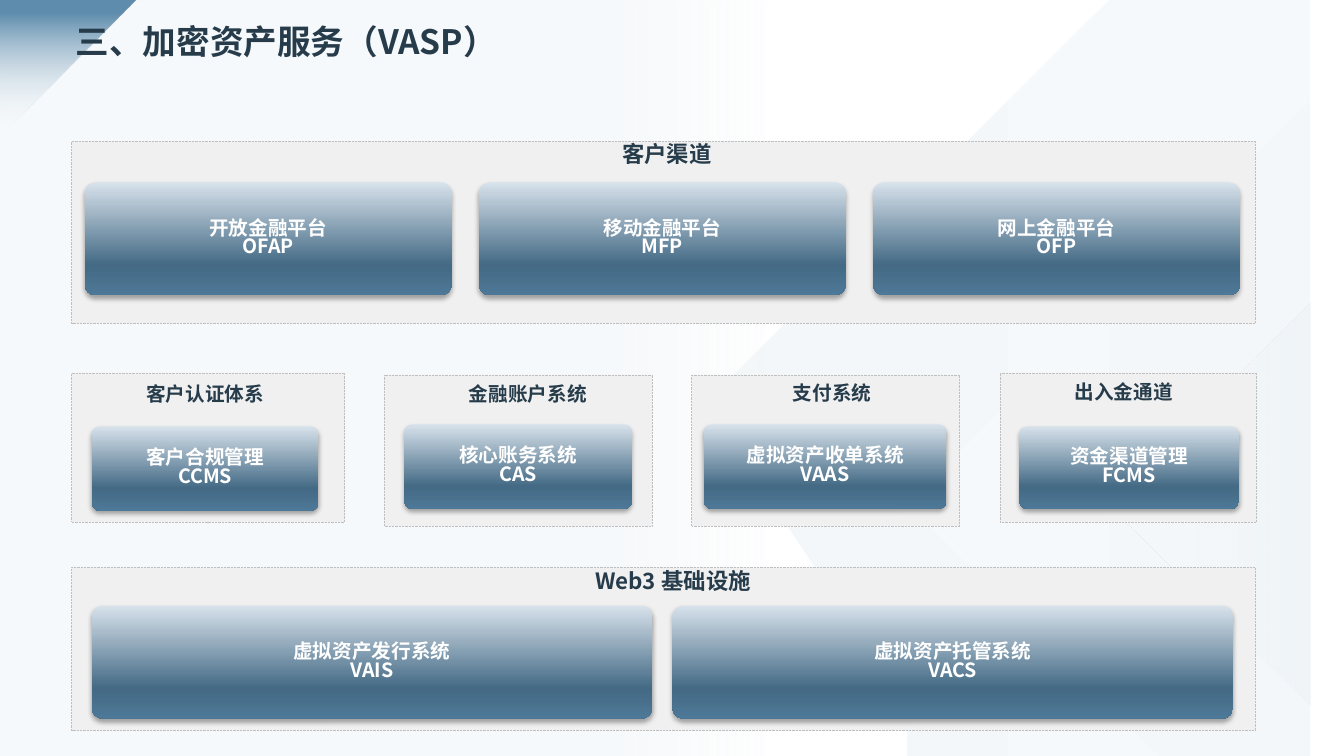
"""Build the slide on crypto asset services."""
import dataclasses

import pptx
import pptx.dml.color
import pptx.enum.dml
import pptx.enum.shapes
import pptx.enum.text
import pptx.oxml
import pptx.oxml.ns
import pptx.util

SIZE = 13.33, 7.5
TITLE = "三、加密资产服务（VASP）"
EDGE = 0.71, 11.74

PANELS = [
    dict(head="客户渠道", area=(EDGE[0], 1.4, EDGE[1], 1.81), label=(5.3, 1.36, 2.63, 0.29),
         first=(0.84, 1.81, 3.64, 1.12), gap=0.27, big=True,
         items=["开放金融平台\nOFAP", "移动金融平台\nMFP", "网上金融平台\nOFP"]),
    dict(head="客户认证体系", area=(EDGE[0], 3.7, 2.71, 1.48), label=(0.91, 3.85, 2.25, 0.28),
         first=(0.91, 4.23, 2.25, 0.84), items=["客户合规管理\nCCMS"]),
    dict(head="金融账户系统", area=(3.81, 3.72, 2.66, 1.5), label=(4.36, 3.85, 1.75, 0.32),
         first=(4.01, 4.21, 2.26, 0.84), items=["核心账务系统\nCAS"]),
    dict(head="支付系统", area=(6.86, 3.72, 2.66, 1.5), label=(7.05, 3.84, 2.41, 0.32),
         first=(6.98, 4.21, 2.41, 0.84), items=["虚拟资产收单系统\nVAAS"]),
    dict(head="出入金通道", area=(9.92, 3.7, 2.54, 1.48), label=(10.37, 3.83, 1.55, 0.28),
         first=(10.11, 4.23, 2.18, 0.82), items=["资金渠道管理\nFCMS"]),
    dict(head="Web3 基础设施", area=(EDGE[0], 5.63, EDGE[1], 1.62), label=(4.75, 5.6, 3.85, 0.29),
         first=(0.91, 6.01, 5.56, 1.12), gap=0.2, big=True,
         items=["虚拟资产发行系统\nVAIS", "虚拟资产托管系统\nVACS"]),
]


@dataclasses.dataclass
class Theme:
    font: str = "Noto Sans CJK SC"
    ink: str = "273C4B"
    white: str = "FFFFFF"
    panel: str = "F0F0F0"
    rim: str = "BFBFBF"
    title: int = 24
    head: int = 16
    body: int = 14
    box: tuple = ((0, "D7E2EB"), (73, "446A85"), (100, "4D7897"))
    facet: tuple = ((0, "F6F9FB"), (100, "F3F7F9"))
    fade: tuple = ((0, "F6F9FB"), (57, "F3F7F9"), (100, "EFF4F8", 70))
    veil: tuple = ((45, "F6F9FB"), (58, "F6F9FB", 0))
    corner: tuple = ((10, "5F8DAD"), (95, "F6F9FB", 0))


LOOK = Theme()
KIND = pptx.enum.shapes.MSO_SHAPE
ALIGN = pptx.enum.text.PP_ALIGN
ANCHOR = pptx.enum.text.MSO_ANCHOR
NS = pptx.oxml.ns.nsdecls("a")

FACETS = [
    ([(11.05, 0), (13.33, 0), (13.33, 7.5), (8.74, 7.5), (9.48, 6.76), (6.89, 4.16)],
     LOOK.facet, 180),
    ([(12.77, 1.26), (13.33, 1.26), (13.33, 7.5), (12.33, 7.5), (9.43, 4.6)], LOOK.facet, 0),
    ([(13.33, 3.21), (13.33, 7.11), (11.38, 5.16)], LOOK.fade, 0),
]


def tint(code):
    return pptx.dml.color.RGBColor.from_string(code)


def blend(shape, stops, angle):
    shape.shadow.inherit = False
    shape.line.fill.background()
    shape.fill.solid()
    marks = "".join(
        f'<a:gs pos="{pos * 1000}"><a:srgbClr val="{code}">'
        f'<a:alpha val="{(alpha or [100])[0] * 1000}"/></a:srgbClr></a:gs>'
        for pos, code, *alpha in stops)
    grad = pptx.oxml.parse_xml(
        f'<a:gradFill {NS} rotWithShape="1"><a:gsLst>{marks}</a:gsLst>'
        f'<a:lin ang="{angle * 60000}" scaled="0"/></a:gradFill>')
    old = shape._element.spPr.find(pptx.oxml.ns.qn("a:solidFill"))
    old.getparent().replace(old, grad)


def add(slide, kind, area):
    shape = slide.shapes.add_shape(kind, *map(pptx.util.Inches, area))
    shape.shadow.inherit = False
    return shape


def write(shape, text, size=LOOK.body, color=LOOK.ink, align=ALIGN.CENTER,
          anchor=ANCHOR.TOP, space=1.0, pad=(0, 0)):
    frame = shape.text_frame
    frame.word_wrap = True
    frame.auto_size = pptx.enum.text.MSO_AUTO_SIZE.NONE
    frame.vertical_anchor = anchor
    frame.margin_left = frame.margin_right = pptx.util.Inches(pad[0])
    frame.margin_top = frame.margin_bottom = pptx.util.Inches(pad[1])
    frame.text = text
    for para in frame.paragraphs:
        para.alignment = align
        para.line_spacing = space
        for run in para.runs:
            font = run.font
            font.size, font.bold, font.name = pptx.util.Pt(size), True, LOOK.font
            font.color.rgb = tint(color)
            font._element.append(
                pptx.oxml.parse_xml(f'<a:ea {NS} typeface="{LOOK.font}"/>'))


def backdrop(slide):
    for points, stops, angle in FACETS:
        pen = slide.shapes.build_freeform(*points[0], scale=914400)
        pen.add_line_segments(points[1:], close=True)
        blend(pen.convert_to_shape(), stops, angle)
    blend(add(slide, KIND.RECTANGLE, (0, 0, *SIZE)), LOOK.veil, 0)
    corner = add(slide, KIND.RIGHT_TRIANGLE, (0, 0, 1.35, 1.35))
    corner.rotation = 90
    blend(corner, LOOK.corner, 0)


def box(slide, area, text):
    shape = add(slide, KIND.ROUNDED_RECTANGLE, area)
    shape.adjustments[0] = 0.1
    blend(shape, LOOK.box, 90)
    glow = shape._element.spPr.find(pptx.oxml.ns.qn("a:effectLst"))
    glow.append(pptx.oxml.parse_xml(
        f'<a:outerShdw {NS} blurRad="44450" dist="27940" dir="5400000" algn="t" '
        'rotWithShape="0"><a:srgbClr val="000000"><a:alpha val="32000"/>'
        '</a:srgbClr></a:outerShdw>'))
    write(shape, text, color=LOOK.white, anchor=ANCHOR.MIDDLE, space=0.8)


def panel(slide, head, area, label, first, items, gap=0, big=False):
    back = add(slide, KIND.RECTANGLE, area)
    back.fill.solid()
    back.fill.fore_color.rgb = tint(LOOK.panel)
    back.line.color.rgb = tint(LOOK.rim)
    back.line.width = pptx.util.Pt(0.5)
    back.line.dash_style = pptx.enum.dml.MSO_LINE.ROUND_DOT
    note = slide.shapes.add_textbox(*map(pptx.util.Inches, label))
    write(note, head, size=LOOK.head if big else LOOK.body, space=1.1 if big else 0.7)
    left, top, width, height = first
    for col, text in enumerate(items):
        box(slide, (left + col * (width + gap), top, width, height), text)


def main():
    deck = pptx.Presentation()
    deck.slide_width, deck.slide_height = map(pptx.util.Inches, SIZE)
    slide = deck.slides.add_slide(deck.slide_layouts[5])
    backdrop(slide)
    title = slide.shapes.title
    title.left, title.top, title.width, title.height = map(
        pptx.util.Inches, (0.65, 0.25, 12.25, 0.51))
    write(title, TITLE, size=LOOK.title, align=ALIGN.LEFT, space=0.9, pad=(0.1, 0))
    slide.shapes._spTree.append(title._element)
    for part in PANELS:
        panel(slide, **part)
    deck.save("out.pptx")


if __name__ == "__main__":
    main()
